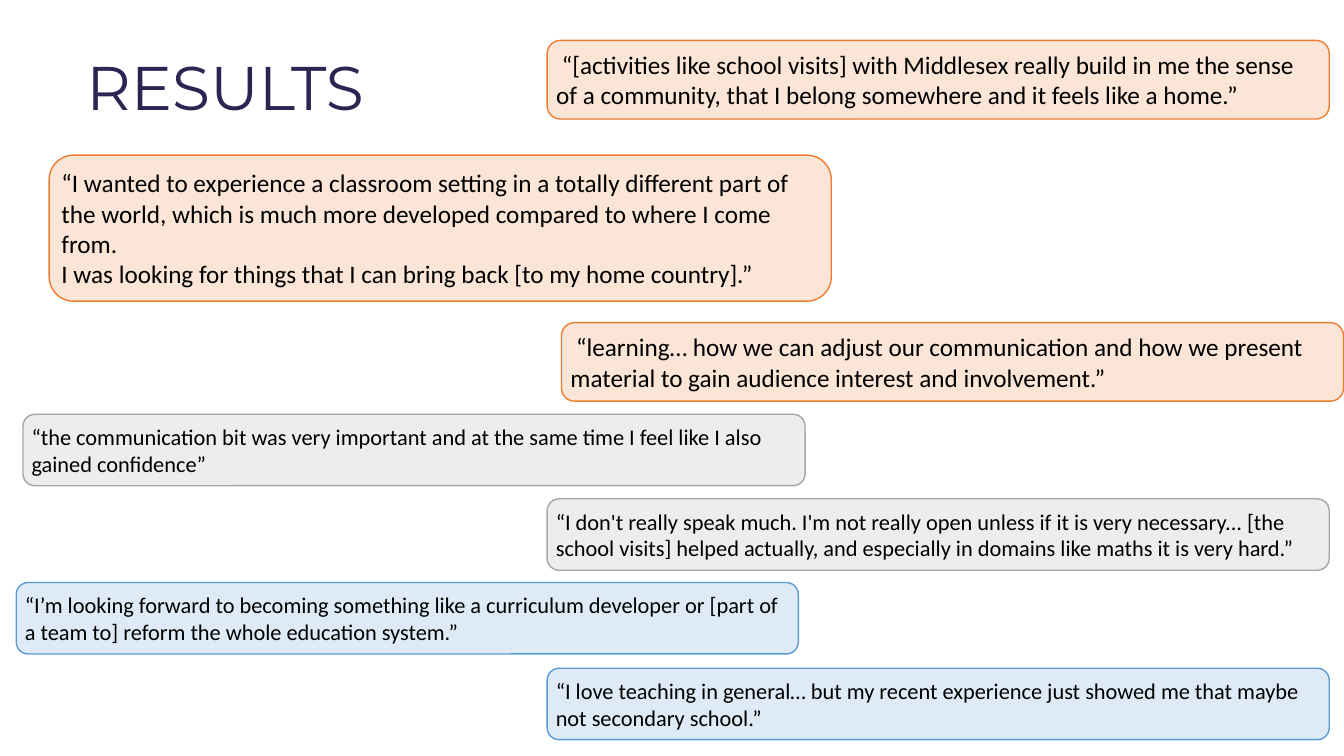
import pptx
import pptx.util
import pptx.dml.color
import pptx.enum.shapes
import pptx.enum.text

Cm = pptx.util.Cm
Pt = pptx.util.Pt

COLORS = {
    "ink": "000000",
    "title": "2E2452",
    "peach": "FBE5D6",
    "orange": "ED7D31",
    "mist": "EDEDED",
    "gray": "A5A5A5",
    "sky": "DEEBF7",
    "blue": "5B9BD5",
}

THEMES = {
    "visit": ("peach", "orange", 18, 1.98),
    "skill": ("mist", "gray", 16, 1.8),
    "career": ("sky", "blue", 16, 1.8),
}

RIGHT = 13.79

QUOTES = [
    ("visit", 1.24, 3.91,
     "“I wanted to experience a classroom setting in a totally different part of the world, "
     "which is much more developed compared to where I come from.\n"
     "I was looking for things that I can bring back [to my home country].”", 3.68),
    ("skill", RIGHT, 12.57,
     "“I don't really speak much. I'm not really open unless if it is very necessary... "
     "[the school visits] helped actually, and especially in domains like maths it is very hard.”"),
    ("visit", 14.15, 8.13,
     " “learning… how we can adjust our communication and how we present material "
     "to gain audience interest and involvement.”"),
    ("career", RIGHT, 16.84,
     "“I love teaching in general… but my recent experience just showed me that maybe "
     "not secondary school.”"),
    ("visit", RIGHT, 1.02,
     " “[activities like school visits] with Middlesex really build in me the sense "
     "of a community, that I belong somewhere and it feels like a home.”"),
    ("skill", 0.58, 10.44,
     "“the communication bit was very important and at the same time I feel like "
     "I also gained confidence”"),
    ("career", 0.41, 14.68,
     "“I’m looking forward to becoming something like a curriculum developer or "
     "[part of a team to] reform the whole education system.”"),
]


class Deck:
    body = "Calibri"
    head = "Montserrat"
    width = 19.71
    inset = Cm(0.13)

    def __init__(self, slide):
        self.slide = slide

    def color(self, name):
        return pptx.dml.color.RGBColor.from_string(COLORS[name])

    def label(self, frame, text, font, size, color):
        frame.text = text
        frame.word_wrap = True
        frame.vertical_anchor = pptx.enum.text.MSO_ANCHOR.MIDDLE
        for para in frame.paragraphs:
            para.alignment = pptx.enum.text.PP_ALIGN.LEFT
            for run in para.runs:
                run.font.name = font
                run.font.size = Pt(size)
                run.font.color.rgb = self.color(color)

    def quote(self, theme, left, top, text, height=None):
        fill, line, size, usual = THEMES[theme]
        box = self.slide.shapes.add_shape(
            pptx.enum.shapes.MSO_SHAPE.ROUNDED_RECTANGLE,
            Cm(left), Cm(top), Cm(self.width), Cm(height or usual))
        box.shadow.inherit = False
        box.fill.solid()
        box.fill.fore_color.rgb = self.color(fill)
        box.line.color.rgb = self.color(line)
        box.line.width = Pt(1)
        frame = box.text_frame
        self.label(frame, text, self.body, size, "ink")
        frame.margin_left = frame.margin_right = self.inset
        frame.margin_top = frame.margin_bottom = self.inset
        frame.auto_size = pptx.enum.text.MSO_AUTO_SIZE.SHAPE_TO_FIT_TEXT

    def title(self, text):
        box = self.slide.shapes.add_textbox(Cm(1.93), Cm(1.22), Cm(28.22), Cm(2.11))
        self.label(box.text_frame, text, self.head, 44, "title")
        box.text_frame.paragraphs[0].line_spacing = 0.9


def main():
    show = pptx.Presentation()
    show.slide_width = Cm(33.87)
    show.slide_height = Cm(19.05)
    deck = Deck(show.slides.add_slide(show.slide_layouts[6]))
    for quote in QUOTES:
        deck.quote(*quote)
    deck.title("RESULTS")
    show.save("out.pptx")


if __name__ == "__main__":
    main()
